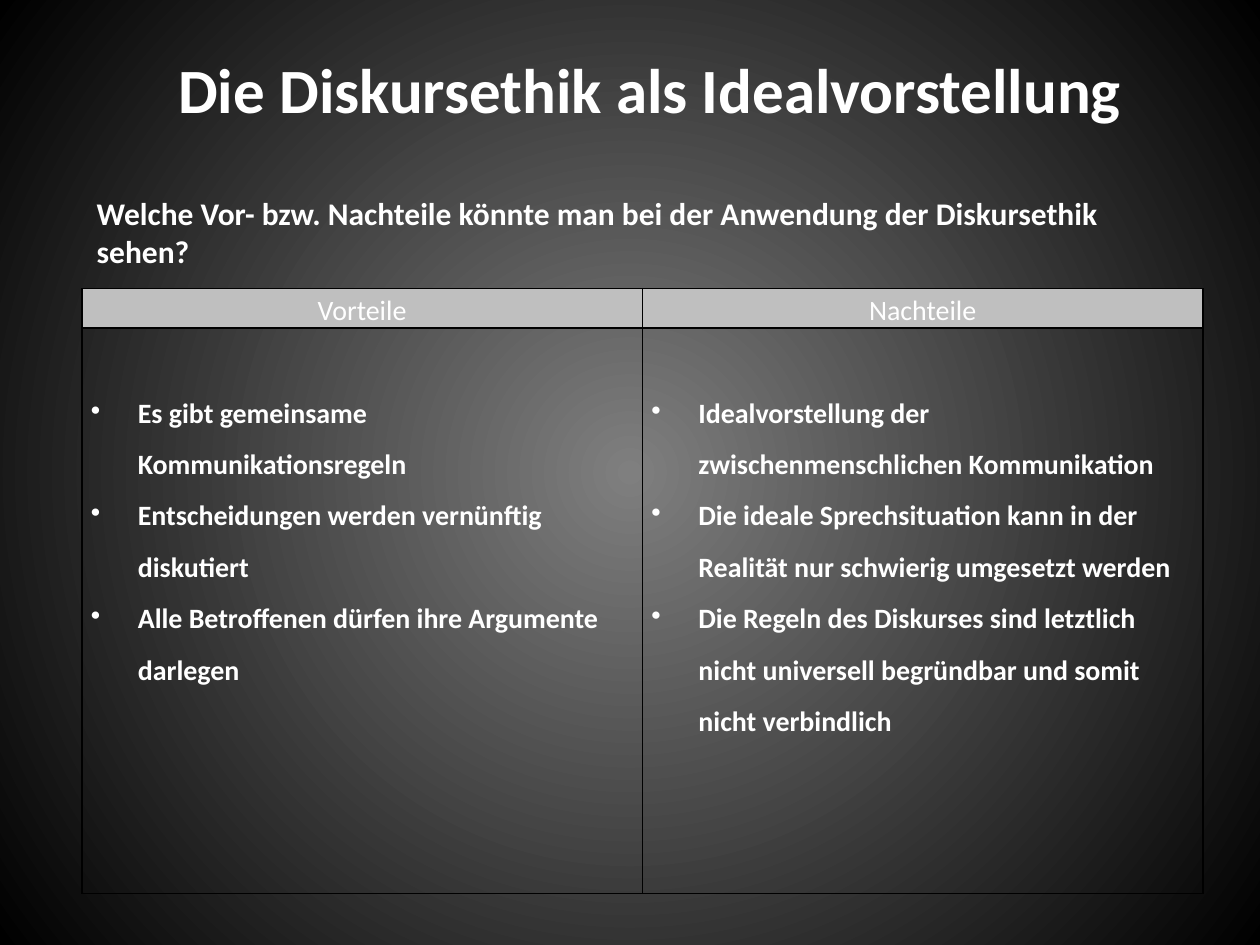
from dataclasses import dataclass

from pptx import Presentation
from pptx.dml.color import RGBColor
from pptx.enum.text import MSO_ANCHOR, PP_ALIGN
from pptx.oxml import parse_xml
from pptx.oxml.ns import nsdecls, qn
from pptx.slide import Slide
from pptx.table import _Cell
from pptx.text.text import TextFrame
from pptx.util import Cm, Pt

WHITE, BLACK, HEADER_GRAY, CENTER_GRAY = "FFFFFF", "000000", "BFBFBF", "7F7F7F"


@dataclass
class Column:
    heading: str
    arguments: list[str]


COLUMNS = [
    Column("Vorteile", [
        "Es gibt gemeinsame Kommunikationsregeln",
        "Entscheidungen werden vernünftig diskutiert",
        "Alle Betroffenen dürfen ihre Argumente darlegen",
    ]),
    Column("Nachteile", [
        "Idealvorstellung der zwischenmenschlichen Kommunikation",
        "Die ideale Sprechsituation kann in der Realität nur schwierig umgesetzt werden",
        "Die Regeln des Diskurses sind letztlich nicht universell begründbar "
        "und somit nicht verbindlich",
    ]),
]


def color(value: str) -> RGBColor:
    return RGBColor.from_string(value)


def write(frame: TextFrame, lines: list[str], *, size: int, bold: bool = True,
          align: PP_ALIGN = PP_ALIGN.LEFT, spacing: float = 1.0,
          bullet: bool = False) -> None:
    frame.word_wrap = True
    for index, line in enumerate(lines):
        paragraph = frame.paragraphs[0] if index == 0 else frame.add_paragraph()
        paragraph.alignment = align
        paragraph.line_spacing = spacing
        run = paragraph.add_run()
        run.text = line
        run.font.name = "Calibri"
        run.font.size = Pt(size)
        run.font.bold = bold
        run.font.color.rgb = color(WHITE)
        if bullet:
            properties = paragraph._p.get_or_add_pPr()
            properties.set("marL", str(Cm(0.95)))
            properties.set("indent", str(-Cm(0.95)))
            properties.append(parse_xml(f'<a:buChar {nsdecls("a")} char="•"/>'))


def add_text(slide: Slide, text: str, left: float, top: float, width: float,
             height: float, *, anchor: MSO_ANCHOR, margin_top: float = 0.13,
             **text_format) -> None:
    box = slide.shapes.add_textbox(Cm(left), Cm(top), Cm(width), Cm(height))
    box.text_frame.vertical_anchor = anchor
    box.text_frame.margin_top = Cm(margin_top)
    write(box.text_frame, [text], **text_format)


def format_cell(cell: _Cell, margin_top: float = 0) -> None:
    cell.margin_left = cell.margin_right = Cm(0.18)
    cell.margin_top, cell.margin_bottom = Cm(margin_top), 0
    properties = cell._tc.get_or_add_tcPr()
    for index, side in enumerate("LRTB"):
        properties.insert(index, parse_xml(
            f'<a:ln{side} {nsdecls("a")} w="{Pt(1)}"><a:solidFill>'
            f'<a:srgbClr val="{BLACK}"/></a:solidFill></a:ln{side}>'))


def add_argument_table(slide: Slide, columns: list[Column]) -> None:
    table = slide.shapes.add_table(2, len(columns), Cm(1.65), Cm(5.82),
                                   Cm(22.6), Cm(12.19)).table
    table.first_row = table.horz_banding = False
    table.rows[0].height, table.rows[1].height = Cm(0.79), Cm(11.4)
    for index, column in enumerate(columns):
        header, body = table.cell(0, index), table.cell(1, index)
        format_cell(header)
        header.fill.solid()
        header.fill.fore_color.rgb = color(HEADER_GRAY)
        write(header.text_frame, [column.heading], size=16, bold=False,
              align=PP_ALIGN.CENTER, spacing=1.15)
        format_cell(body, margin_top=1.04)
        body.fill.background()
        write(body.text_frame, column.arguments, size=16, spacing=1.5, bullet=True)


def set_radial_background(slide: Slide, inner: str, outer: str) -> None:
    fill = slide.background.fill
    fill.gradient()
    for stop, value in zip(fill.gradient_stops, (inner, outer)):
        stop.color.rgb = color(value)
    gradient = slide.element.find(f".//{qn('a:gradFill')}")
    gradient.replace(gradient.find(qn("a:lin")), parse_xml(
        f'<a:path {nsdecls("a")} path="circle">'
        '<a:fillToRect l="50000" t="50000" r="50000" b="50000"/></a:path>'))


def main() -> None:
    presentation = Presentation()
    presentation.slide_width, presentation.slide_height = Cm(25.4), Cm(19.05)
    slide = presentation.slides.add_slide(presentation.slide_layouts[6])
    set_radial_background(slide, CENTER_GRAY, BLACK)

    # Title
    add_text(slide, "Die Diskursethik als Idealvorstellung", 2.31, 0.53, 21.59, 2.51,
             anchor=MSO_ANCHOR.MIDDLE, size=36, align=PP_ALIGN.CENTER)

    # Advantages and disadvantages
    add_argument_table(slide, COLUMNS)

    # Guiding question
    add_text(slide, "Welche Vor- bzw. Nachteile könnte man bei der Anwendung der "
             "Diskursethik sehen?", 1.7, 3.73, 22.56, 2.57,
             anchor=MSO_ANCHOR.TOP, margin_top=0.18, size=18)

    presentation.save("out.pptx")


if __name__ == "__main__":
    main()
